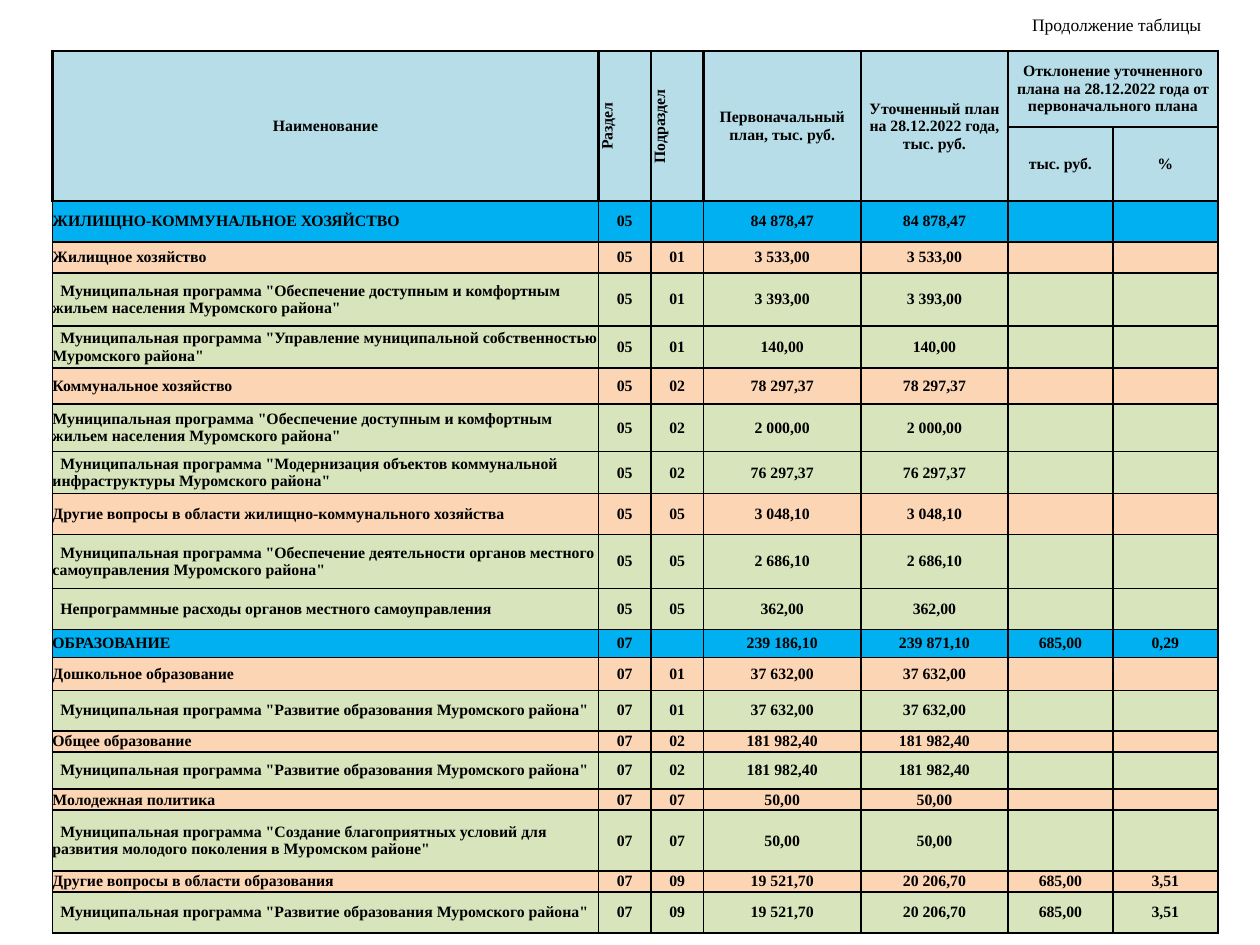
from dataclasses import dataclass

from lxml import etree
from pptx import Presentation
from pptx.dml.color import RGBColor
from pptx.enum.text import MSO_ANCHOR, PP_ALIGN
from pptx.oxml.ns import qn
from pptx.slide import Slide
from pptx.table import Table, _Cell
from pptx.util import Pt

LEFT, CENTER, RIGHT = PP_ALIGN.LEFT, PP_ALIGN.CENTER, PP_ALIGN.RIGHT
MIDDLE = MSO_ANCHOR.MIDDLE
FONT = "Times New Roman"
TABLE_SIZE = 9
COLORS = {
    "header": "B7DEE8",
    "section": "00B0F0",
    "subsection": "FCD5B4",
    "program": "D8E4BC",
    "ink": "000000",
}
COLUMN_WIDTHS = [312, 30, 30, 90, 84, 60, 60]
HEADER_HEIGHTS = [43.2, 23.4]


@dataclass
class HeaderCell:
    row: int
    column: int
    text: str
    row_span: int = 1
    column_span: int = 1
    vertical: bool = False


@dataclass
class BudgetRow:
    level: str
    height: float
    name: str
    section: str
    subsection: str
    initial: str
    revised: str
    deviation: str = ""
    percent: str = ""
    indent: float = 0

    def texts(self) -> list[str]:
        return [self.name, self.section, self.subsection, self.initial,
                self.revised, self.deviation, self.percent]


def program(height: float, name: str, *values: str, indent: float = 4.5) -> BudgetRow:
    return BudgetRow("program", height, name, *values, indent=indent)


HOUSING = 'Муниципальная программа "Обеспечение доступным и комфортным жильем населения Муромского района"'
PROPERTY = 'Муниципальная программа "Управление муниципальной собственностью Муромского района"'
UTILITIES = 'Муниципальная программа "Модернизация объектов коммунальной инфраструктуры Муромского района"'
GOVERNMENT = 'Муниципальная программа "Обеспечение деятельности органов местного самоуправления Муромского района"'
EDUCATION = 'Муниципальная программа "Развитие образования Муромского района"'
YOUTH = 'Муниципальная программа "Создание благоприятных условий для развития молодого поколения в Муромском районе"'

HEADER = [
    HeaderCell(0, 0, "Наименование", row_span=2),
    HeaderCell(0, 1, "Раздел", row_span=2, vertical=True),
    HeaderCell(0, 2, "Подраздел", row_span=2, vertical=True),
    HeaderCell(0, 3, "Первоначальный план, тыс. руб.", row_span=2),
    HeaderCell(0, 4, "Уточненный план на 28.12.2022 года, тыс. руб.", row_span=2),
    HeaderCell(0, 5, "Отклонение уточненного плана на 28.12.2022 года от первоначального плана",
               column_span=2),
    HeaderCell(1, 5, "тыс. руб."),
    HeaderCell(1, 6, "%"),
]

ROWS = [
    BudgetRow("section", 23.4, "ЖИЛИЩНО-КОММУНАЛЬНОЕ ХОЗЯЙСТВО", "05", "", "84 878,47", "84 878,47"),
    BudgetRow("subsection", 17.8, "Жилищное хозяйство", "05", "01", "3 533,00", "3 533,00"),
    program(30.2, HOUSING, "05", "01", "3 393,00", "3 393,00"),
    program(24, PROPERTY, "05", "01", "140,00", "140,00"),
    BudgetRow("subsection", 20.5, "Коммунальное хозяйство", "05", "02", "78 297,37", "78 297,37"),
    program(27.4, HOUSING, "05", "02", "2 000,00", "2 000,00", indent=0),
    program(24, UTILITIES, "05", "02", "76 297,37", "76 297,37"),
    BudgetRow("subsection", 23.4, "Другие вопросы в области жилищно-коммунального хозяйства",
              "05", "05", "3 048,10", "3 048,10"),
    program(30.8, GOVERNMENT, "05", "05", "2 686,10", "2 686,10"),
    program(23.4, "Непрограммные расходы органов местного самоуправления",
            "05", "05", "362,00", "362,00"),
    BudgetRow("section", 16, "ОБРАЗОВАНИЕ", "07", "", "239 186,10", "239 871,10", "685,00", "0,29"),
    BudgetRow("subsection", 18.8, "Дошкольное образование", "07", "01", "37 632,00", "37 632,00"),
    program(23.2, EDUCATION, "07", "01", "37 632,00", "37 632,00"),
    BudgetRow("subsection", 12, "Общее образование", "07", "02", "181 982,40", "181 982,40"),
    program(21.4, EDUCATION, "07", "02", "181 982,40", "181 982,40"),
    BudgetRow("subsection", 12, "Молодежная политика", "07", "07", "50,00", "50,00"),
    program(34.8, YOUTH, "07", "07", "50,00", "50,00"),
    BudgetRow("subsection", 12, "Другие вопросы в области образования",
              "07", "09", "19 521,70", "20 206,70", "685,00", "3,51"),
    program(23.4, EDUCATION, "07", "09", "19 521,70", "20 206,70", "685,00", "3,51"),
]


def set_borders(cell: _Cell, width: float) -> None:
    properties = cell._tc.get_or_add_tcPr()
    for index, side in enumerate(("lnL", "lnR", "lnT", "lnB")):
        line = etree.Element(qn(f"a:{side}"), w=str(int(Pt(width))))
        fill = etree.SubElement(line, qn("a:solidFill"))
        etree.SubElement(fill, qn("a:srgbClr"), val=COLORS["ink"])
        properties.insert(index, line)


def write_cell(cell: _Cell, text: str, color: str, border: float,
               align: PP_ALIGN = CENTER, indent: float = 0) -> None:
    cell.margin_left = cell.margin_right = cell.margin_top = cell.margin_bottom = 0
    cell.vertical_anchor = MIDDLE
    cell.fill.solid()
    cell.fill.fore_color.rgb = RGBColor.from_string(COLORS[color])
    set_borders(cell, border)
    cell.text_frame.text = text
    paragraph = cell.text_frame.paragraphs[0]
    paragraph.alignment = align
    if indent:
        paragraph._p.get_or_add_pPr().set("indent", str(int(Pt(indent))))
    for run in paragraph.runs:
        run.font.name = FONT
        run.font.size = Pt(TABLE_SIZE)
        run.font.bold = True
        run.font.color.rgb = RGBColor.from_string(COLORS["ink"])
    if not text:
        etree.SubElement(paragraph._p, qn("a:endParaRPr"), sz=str(TABLE_SIZE * 100))


def fill_header(table: Table) -> None:
    header_texts = {(item.row, item.column): item.text for item in HEADER}
    for row in range(len(HEADER_HEIGHTS)):
        for column in range(len(COLUMN_WIDTHS)):
            write_cell(table.cell(row, column), header_texts.get((row, column), ""), "header", 1.5)
    for item in HEADER:
        cell = table.cell(item.row, item.column)
        if item.vertical:
            cell._tc.get_or_add_tcPr().set("vert", "vert270")
        if item.row_span * item.column_span > 1:
            cell.merge(table.cell(item.row + item.row_span - 1, item.column + item.column_span - 1))


def fill_body(table: Table) -> None:
    for row_index, row in enumerate(ROWS, len(HEADER_HEIGHTS)):
        for column, text in enumerate(row.texts()):
            align, indent = (CENTER, 0) if column else (LEFT, row.indent)
            write_cell(table.cell(row_index, column), text, row.level, 1, align, indent)


def add_budget_table(slide: Slide) -> None:
    heights = HEADER_HEIGHTS + [row.height for row in ROWS]
    table = slide.shapes.add_table(len(heights), len(COLUMN_WIDTHS), Pt(30), Pt(29.3),
                                   Pt(sum(COLUMN_WIDTHS)), Pt(sum(heights))).table
    table.first_row = table.horz_banding = False
    for column, width in zip(table.columns, COLUMN_WIDTHS):
        column.width = Pt(width)
    for row, height in zip(table.rows, heights):
        row.height = Pt(height)
    fill_header(table)
    fill_body(table)


def add_caption(slide: Slide) -> None:
    text_frame = slide.shapes.add_textbox(Pt(570), Pt(4.5), Pt(126), Pt(19.4)).text_frame
    text_frame.word_wrap = True
    text_frame.margin_right = Pt(9.7)
    text_frame.text = "Продолжение таблицы"
    paragraph = text_frame.paragraphs[0]
    paragraph.alignment = RIGHT
    font = paragraph.runs[0].font
    font.name = FONT
    font.size = Pt(10)
    font.color.rgb = RGBColor.from_string(COLORS["ink"])


def main() -> None:
    presentation = Presentation()
    presentation.slide_width, presentation.slide_height = Pt(720), Pt(540)
    slide = presentation.slides.add_slide(presentation.slide_layouts[6])
    add_budget_table(slide)
    add_caption(slide)
    presentation.save("out.pptx")


if __name__ == "__main__":
    main()
